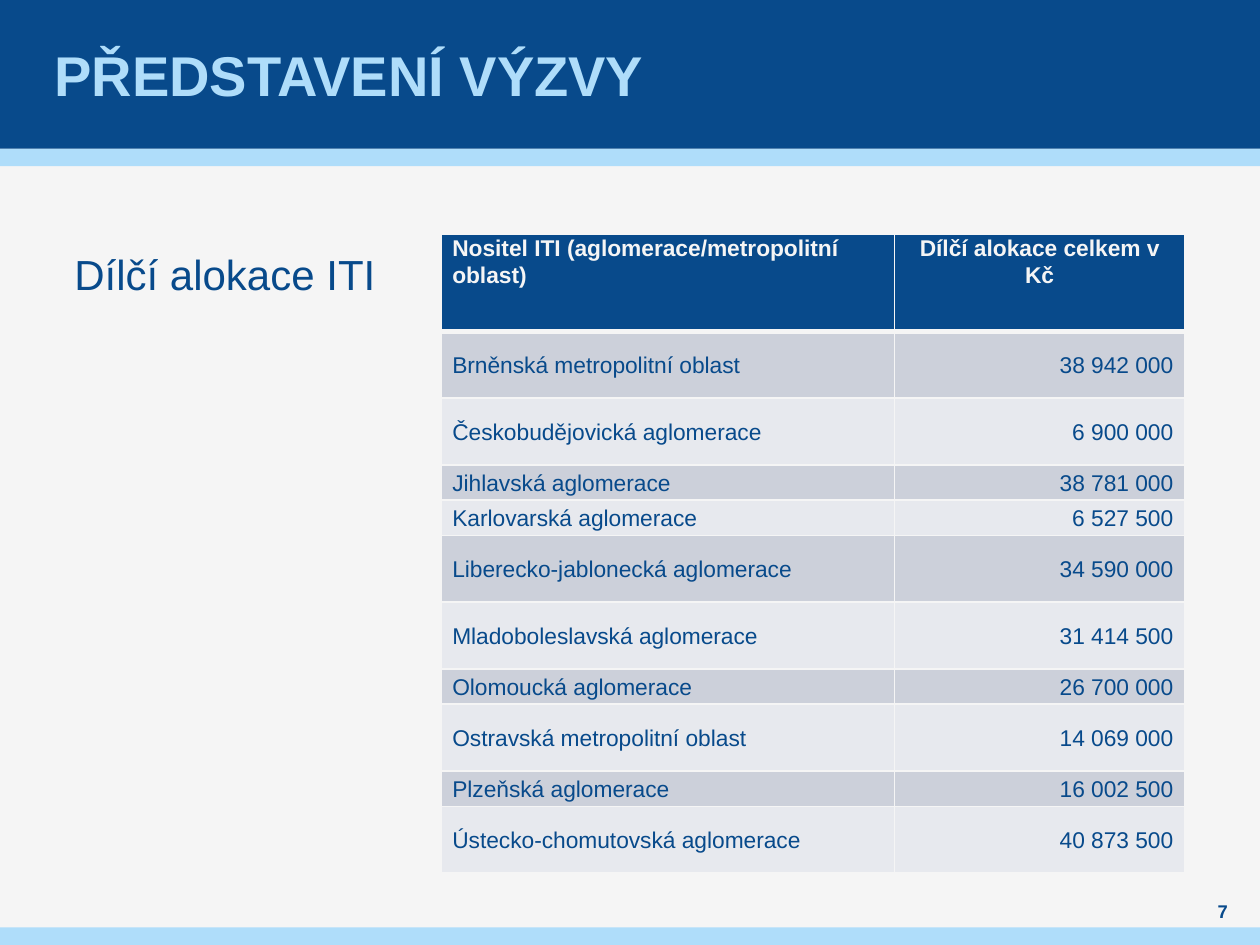
from lxml.etree import SubElement
from pptx import Presentation
from pptx.dml.color import RGBColor
from pptx.enum.shapes import MSO_SHAPE
from pptx.enum.text import MSO_ANCHOR, PP_ALIGN
from pptx.oxml.ns import qn
from pptx.util import Inches, Pt

HUES = {"navy": "084A8B", "sky": "AFDDFA", "pale": "F5F5F5",
        "dark": "CCD0DA", "light": "E7E9EE"}
HEAD = ("Nositel ITI (aglomerace/metropolitní oblast)", "Dílčí alokace celkem v Kč")
TALL, LOW = 0.53, 0.28
ROWS = [
    ("Brněnská metropolitní oblast", "38 942 000", TALL),
    ("Českobudějovická aglomerace", "6 900 000", TALL),
    ("Jihlavská aglomerace", "38 781 000", LOW),
    ("Karlovarská aglomerace", "6 527 500", LOW),
    ("Liberecko-jablonecká aglomerace", "34 590 000", TALL),
    ("Mladoboleslavská aglomerace", "31 414 500", TALL),
    ("Olomoucká aglomerace", "26 700 000", LOW),
    ("Ostravská metropolitní oblast", "14 069 000", TALL),
    ("Plzeňská aglomerace", "16 002 500", LOW),
    ("Ústecko-chomutovská aglomerace", "40 873 500", TALL),
]


def color(name):
    return RGBColor.from_string(HUES[name])


def paint(item, name):
    item.fill.solid()
    item.fill.fore_color.rgb = color(name)


def assign(item, values):
    for key, value in values.items():
        setattr(item, key, value)


def write(frame, text, size, hue, bold=False, **form):
    """Put one run in the frame; form holds paragraph settings."""
    para = frame.paragraphs[0]
    assign(para, form)
    run = para.add_run()
    run.text = text
    assign(run.font, {"name": "Arial", "size": Pt(size), "bold": bold})
    run.font.color.rgb = color(hue)


def add_bar(slide, box, hue):
    bar = slide.shapes.add_shape(MSO_SHAPE.RECTANGLE, *map(Inches, box))
    bar.shadow.inherit = False
    bar.line.fill.background()
    paint(bar, hue)


def add_text(slide, box, text, size, hue, side=0, anchor=MSO_ANCHOR.TOP, **form):
    frame = slide.shapes.add_textbox(*map(Inches, box)).text_frame
    assign(frame, {"word_wrap": True, "vertical_anchor": anchor,
                   "margin_left": Inches(side), "margin_right": Inches(side),
                   "margin_top": 0, "margin_bottom": 0})
    write(frame, text, size, hue, **form)


def add_header(slide, box):
    left, top, width, height = box
    add_bar(slide, (left, top + height, width, 0.14), "sky")
    add_bar(slide, box, "navy")
    add_text(slide, (left + 0.39, top, width - 0.79, height), "PŘEDSTAVENÍ VÝZVY",
             32, "sky", side=0.04, anchor=MSO_ANCHOR.MIDDLE, bold=True)


def add_footer(slide, box):
    left, top, width, _ = box
    add_bar(slide, box, "sky")
    add_text(slide, (left + width - 0.55, top - 0.23, 0.51, 0.2), "7", 10.5, "navy",
             anchor=MSO_ANCHOR.MIDDLE, bold=True,
             alignment=PP_ALIGN.CENTER, space_after=Pt(6))


def add_edges(cell, base):
    """Draw cell borders; base is the width of the bottom one in points."""
    props = cell._tc.get_or_add_tcPr()
    widths = {"a:lnL": 1, "a:lnR": 1, "a:lnT": 1, "a:lnB": base}
    for place, (tag, width) in enumerate(widths.items()):
        line = SubElement(props, qn(tag), w=str(Pt(width)))
        fill = SubElement(line, qn("a:solidFill"))
        SubElement(fill, qn("a:srgbClr"), val=HUES["pale"])
        props.insert(place, line)


def fill_cell(cell, text, fill, hue, anchor, align, base=1, bold=False):
    assign(cell, {"margin_left": Inches(0.09), "margin_right": Inches(0.09),
                  "margin_top": 0, "margin_bottom": 0, "vertical_anchor": anchor})
    paint(cell, fill)
    add_edges(cell, base)
    write(cell.text_frame, text, 13, hue, bold, alignment=align,
          line_spacing=1.06, space_after=Pt(8))


def add_grid(slide, box):
    table = slide.shapes.add_table(len(ROWS) + 1, 2, *map(Inches, box)).table
    for column, width in zip(table.columns, (3.6, box[2] - 3.6)):
        column.width = Inches(width)
    for row, height in zip(table.rows, [0.77] + [item[2] for item in ROWS]):
        row.height = Inches(height)
    for col, (text, align) in enumerate(zip(HEAD, (PP_ALIGN.LEFT, PP_ALIGN.CENTER))):
        fill_cell(table.cell(0, col), text, "navy", "pale", MSO_ANCHOR.TOP,
                  align, base=3, bold=True)
    for row, item in enumerate(ROWS, 1):
        fill = "dark" if row % 2 else "light"
        for col, align in enumerate((PP_ALIGN.LEFT, PP_ALIGN.RIGHT)):
            fill_cell(table.cell(row, col), item[col], fill, "navy",
                      MSO_ANCHOR.MIDDLE, align)


def main():
    deck = Presentation()
    assign(deck, {"slide_width": Inches(10), "slide_height": Inches(7.5)})
    slide = deck.slides.add_slide(deck.slide_layouts[6])
    paint(slide.background, "pale")
    add_header(slide, (0, 0, 10, 1.18))
    add_text(slide, (0.59, 1.97, 4.33, 4.72), "Dílčí alokace ITI", 24, "navy",
             line_spacing=Pt(28.8), space_before=Pt(6), space_after=Pt(6))
    add_footer(slide, (0, 7.36, 10, 0.14))
    add_grid(slide, (3.5, 1.86, 5.9, 5.04))
    deck.save("out.pptx")


if __name__ == "__main__":
    main()
